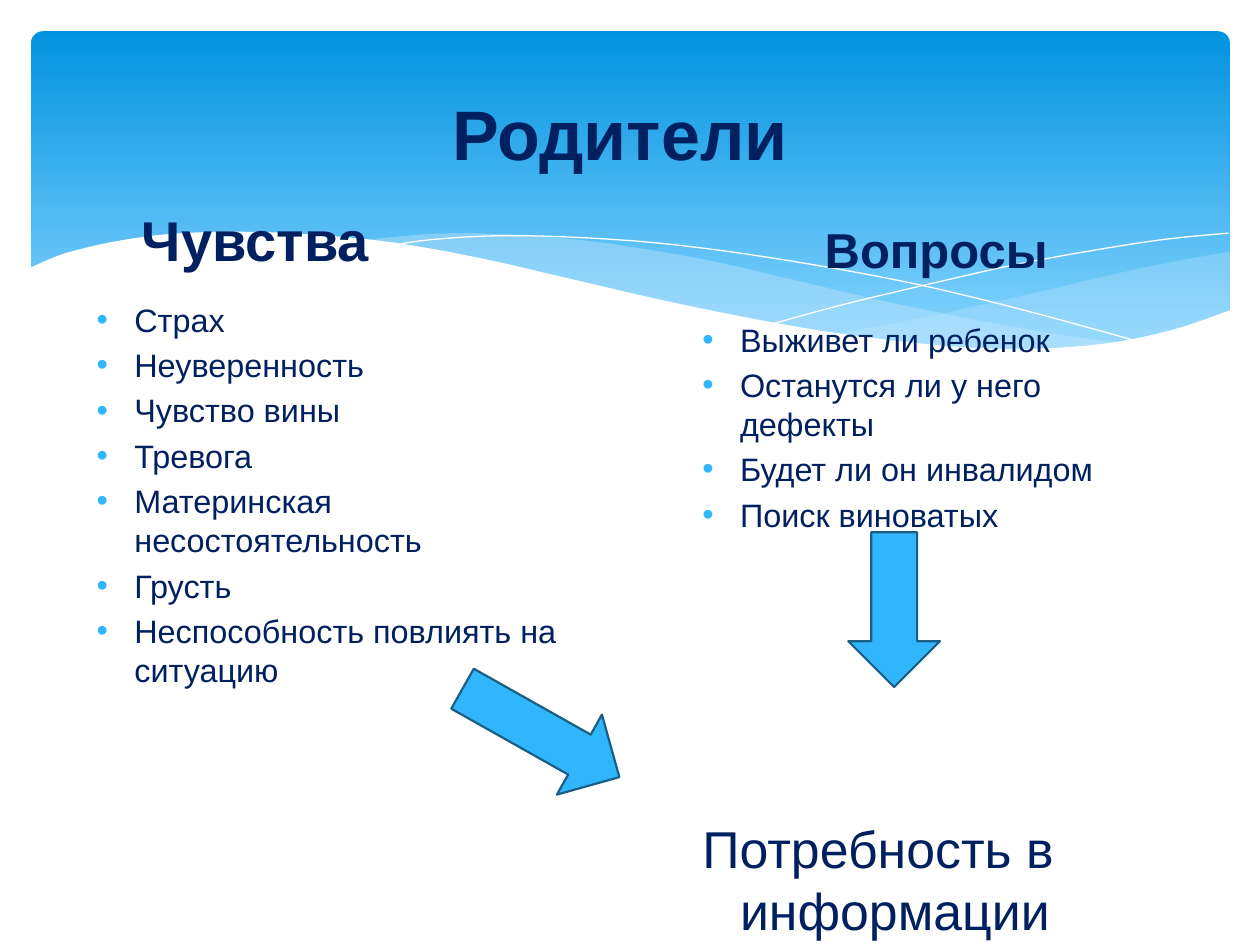
from lxml.etree import SubElement
from pptx import Presentation
from pptx.dml.color import RGBColor
from pptx.enum.shapes import MSO_SHAPE
from pptx.enum.text import MSO_ANCHOR, PP_ALIGN
from pptx.oxml.ns import qn
from pptx.util import Cm, Pt

# Content: text, (left, top, width, height) in cm, size in points
NAVY, SKY, SKY_EDGE, MIST, WHITE = "002060", "31B6FD", "195F84", "C6E7FC", "FFFFFF"
HEADINGS = [
    ("Родители ", (1.27, 0.94, 22.86, 3.48), 40),
    ("Чувства ", (0, 3.94, 10.62, 1.78), 32),
    ("Вопросы ", (13.7, 4.12, 10.62, 1.78), 28),
]
FEELINGS = ["Страх", "Неуверенность", "Чувство вины", "Тревога",
            "Материнская несостоятельность", "Грусть",
            "Неспособность повлиять на ситуацию"]
QUESTIONS = ["Выживет ли ребенок", "Останутся ли у него дефекты",
             "Будет ли он инвалидом", "Поиск виноватых"]
NEED = ["Потребность в информации"]
LISTS = [
    (FEELINGS, (1.7, 5.92, 10.8, 8.1), 18.5, True),
    (QUESTIONS, (13.91, 6.32, 10, 4.7), 18.5, True),
    (NEED, (13.91, 16.33, 10, 2.7), 29.6, False),
]
ARROWS = [((17.1, 10.73, 1.85, 3.12), 180), ((9.98, 12.96, 1.85, 3.63), 119.4)]

# Waves: edges as points in hundredths of an inch; fill, opacity in percent
WAVES = [
    ([[(975, 200), (935, 207), (891, 216), (832, 230), (779, 242), (729, 253), (661, 265)],
      [(661, 265), (705, 271), (757, 276), (814, 278), (872, 274), (928, 263), (976, 247)],
      [(976, 247), (976, 200)]], MIST, 29),
    ([[(893, 273), (837, 265), (775, 254), (706, 240), (629, 222), (569, 208), (514, 198),
       (465, 191), (420, 187), (361, 185), (313, 188), (286, 191)],
      [(286, 191), (342, 199), (404, 211), (449, 222), (530, 240), (601, 255), (665, 266),
       (722, 274), (773, 277), (818, 278), (857, 277), (893, 273)]], MIST, 40),
    ([[(309, 195), (344, 190), (401, 187), (469, 189), (533, 194), (608, 204),
       (695, 219), (760, 233), (831, 251), (907, 272)]], None, 100),
    ([[(613, 257), (672, 241), (748, 223), (806, 210), (866, 199), (924, 190), (975, 185)]],
     None, 100),
    ([[(977, 246), (930, 262), (875, 273), (809, 277), (744, 274), (668, 265), (603, 254),
       (529, 239), (447, 220), (391, 207), (340, 197), (292, 190), (230, 185), (177, 184),
       (132, 186), (95, 191), (67, 197), (46, 203), (23, 213)],
      [(23, 213), (23, 329)], [(23, 329), (977, 329)]], WHITE, 100),
]


def rgb(value):
    return RGBColor.from_string(value)


def lengths(box):
    return [Cm(value) for value in box]


def smooth(edge, steps=4):
    """Catmull-Rom curve through the points of an edge."""
    padded = [edge[0], *edge, edge[-1]]
    curve = [edge[0]]
    for a, b, c, d in zip(padded, padded[1:], padded[2:], padded[3:]):
        for t in (step / steps for step in range(1, steps + 1)):
            curve.append(tuple(
                (2 * q + (r - p) * t + (2 * p - 5 * q + 4 * r - s) * t ** 2
                 + (3 * q - p - 3 * r + s) * t ** 3) / 2
                for p, q, r, s in zip(a, b, c, d)))
    return curve


def add_wave(edges, color, opacity):
    points = [(Cm(x * 0.0254), Cm(y * 0.0254)) for edge in edges for x, y in smooth(edge)]
    builder = slide.shapes.build_freeform(*points[0])
    builder.add_line_segments(points[1:], close=color is not None)
    wave = builder.convert_to_shape()
    wave.shadow.inherit = False
    if color is None:
        wave.fill.background()
        wave.line.color.rgb = rgb(WHITE)
        wave.line.width = Pt(0)
        return
    wave.line.fill.background()
    wave.fill.solid()
    wave.fill.fore_color.rgb = rgb(color)
    if opacity < 100:
        fill_color = wave.fill._xPr.find(qn("a:solidFill"))[0]
        SubElement(fill_color, qn("a:alpha"), val=str(opacity * 1000))


def add_text(lines, box):
    frame = slide.shapes.add_textbox(*lengths(box)).text_frame
    frame.word_wrap = True
    frame.text = "\n".join(lines)
    return frame


def style(paragraph, size, bold=False):
    font = paragraph.runs[0].font
    font.name, font.size, font.bold = "Arial", Pt(size), bold
    font.color.rgb = rgb(NAVY)


def hang(paragraph, bulleted):
    props = paragraph._p.get_or_add_pPr()
    props.set("marL", str(Cm(0.76)))
    props.set("indent", str(-Cm(0.76)))
    if bulleted:
        SubElement(SubElement(props, qn("a:buClr")), qn("a:srgbClr"), val=SKY)
        SubElement(props, qn("a:buFont"), typeface="Arial")
        SubElement(props, qn("a:buChar"), char="•")


deck = Presentation()
deck.slide_width, deck.slide_height = Cm(25.4), Cm(19.05)
slide = deck.slides.add_slide(deck.slide_layouts[6])

# Gradient banner with waves
banner = slide.shapes.add_shape(MSO_SHAPE.ROUNDED_RECTANGLE, *lengths((0.63, 0.63, 24.16, 6.86)))
banner.adjustments[0] = 0.034
banner.shadow.inherit = False
banner.line.fill.background()
banner.fill.gradient()
banner.fill.gradient_angle = 270
for stop, (position, color) in zip(banner.fill.gradient_stops, [(0, "0293E0"), (0.9, "83D3FE")]):
    stop.position, stop.color.rgb = position, rgb(color)
for wave_parts in WAVES:
    add_wave(*wave_parts)

# Headings
for heading, box, size in HEADINGS:
    frame = add_text([heading], box)
    frame.vertical_anchor = MSO_ANCHOR.MIDDLE
    frame.paragraphs[0].alignment = PP_ALIGN.CENTER
    style(frame.paragraphs[0], size, bold=True)

# Lists and conclusion
for lines, box, size, bulleted in LISTS:
    for number, paragraph in enumerate(add_text(lines, box).paragraphs):
        hang(paragraph, bulleted)
        paragraph.space_before = Pt(size * 0.2 if number else 0)
        style(paragraph, size)

# Arrows to the conclusion
for box, angle in ARROWS:
    arrow = slide.shapes.add_shape(MSO_SHAPE.UP_ARROW, *lengths(box))
    arrow.rotation = angle
    arrow.shadow.inherit = False
    arrow.fill.solid()
    arrow.fill.fore_color.rgb = rgb(SKY)
    arrow.line.color.rgb = rgb(SKY_EDGE)
    arrow.line.width = Pt(1.25)

deck.save("out.pptx")
